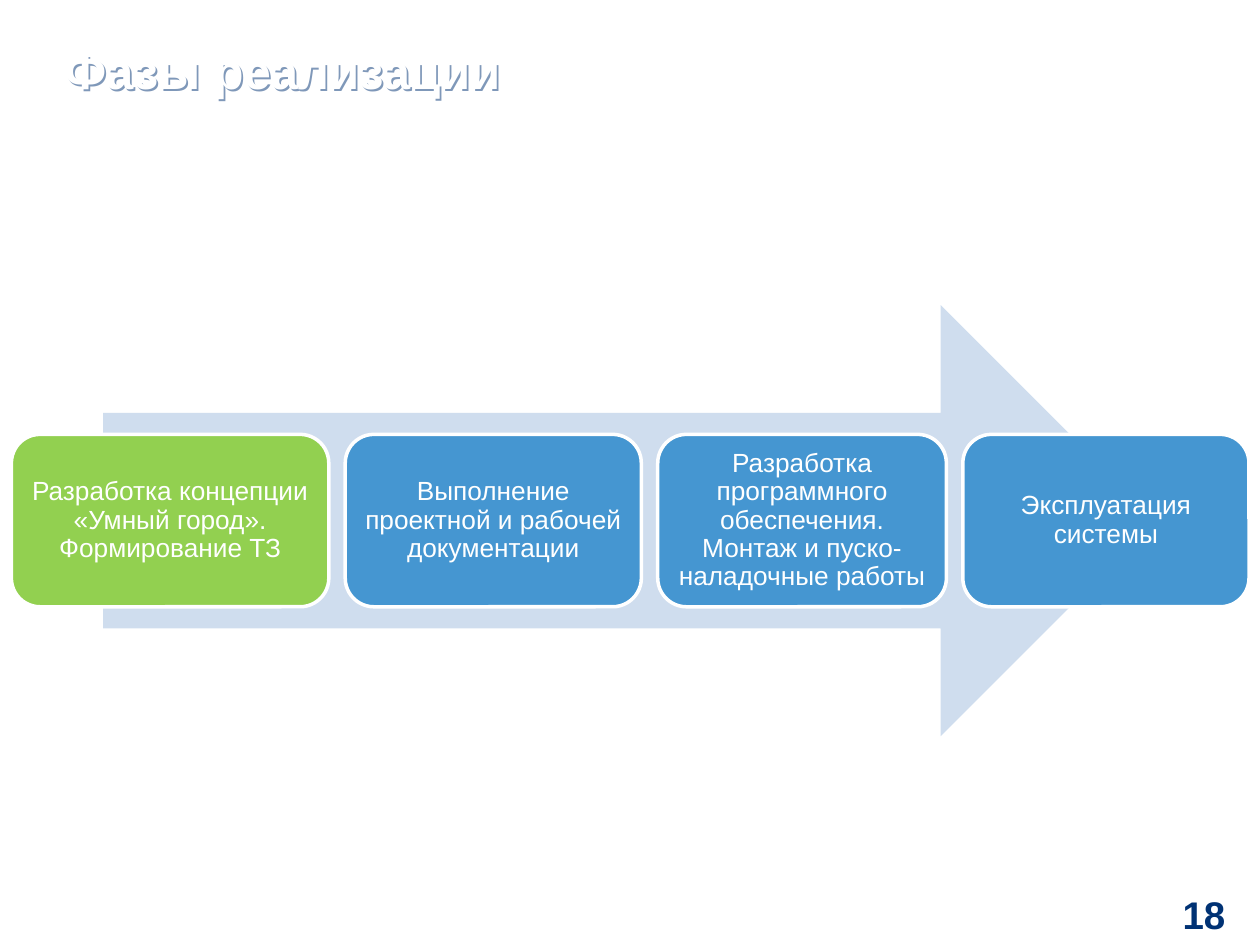
from dataclasses import dataclass

from lxml import etree
from pptx import Presentation
from pptx.dml.color import RGBColor
from pptx.enum.shapes import MSO_SHAPE
from pptx.enum.text import MSO_ANCHOR, PP_ALIGN
from pptx.oxml import parse_xml
from pptx.util import Cm, Pt


@dataclass(frozen=True)
class Theme:
    font: str = "Arial"
    white: str = "FFFFFF"
    navy: str = "003274"
    pale: str = "CFDDEE"
    green: str = "92D050"
    blue: str = "4596D1"
    title_size: int = 28
    number_size: int = 22
    card_size: int = 15


@dataclass(frozen=True)
class Box:
    """A region of the slide, in centimetres."""
    left: float
    top: float
    width: float
    height: float

    def lengths(self):
        return [Cm(side) for side in (self.left, self.top, self.width, self.height)]


THEME = Theme()
CARD_GAP = 0.33
PHASES = [
    ("Разработка концепции «Умный город». Формирование ТЗ", 6.4, THEME.green),
    ("Выполнение проектной и рабочей документации", 5.97, THEME.blue),
    ("Разработка программного обеспечения. Монтаж и пуско-наладочные работы",
     5.82, THEME.blue),
    ("Эксплуатация системы", 5.77, THEME.blue),
]


def set_all(target, values):
    for name, value in values.items():
        setattr(target, name, value)


def write(shape, text, size, color, align, bold=False, inset=0.0, spacing=1.0):
    frame = shape.text_frame
    margin = Cm(inset)
    set_all(frame, {"word_wrap": True, "vertical_anchor": MSO_ANCHOR.MIDDLE,
                    "margin_left": margin, "margin_right": margin,
                    "margin_top": margin, "margin_bottom": margin})
    para = frame.paragraphs[0]
    set_all(para, {"alignment": align, "line_spacing": spacing})
    span = para.add_run()
    span.text = text
    set_all(span.font, {"name": THEME.font, "size": Pt(size), "bold": bold})
    span.font.color.rgb = RGBColor.from_string(color)


def paint(shape, fill):
    shape.shadow.inherit = False
    shape.fill.solid()
    shape.fill.fore_color.rgb = RGBColor.from_string(fill)
    shape.line.fill.background()


def cast_text_shadow(shape):
    """Give an unfilled shape a shadow, which falls from its letters."""
    shape.shadow.inherit = False
    effects = shape.element.spPr.find(
        "{http://schemas.openxmlformats.org/drawingml/2006/main}effectLst")
    shadow = parse_xml(
        '<a:outerShdw xmlns:a="http://schemas.openxmlformats.org/drawingml/2006/main"'
        ' dist="17961" dir="2700000" algn="ctr" rotWithShape="0">'
        f'<a:srgbClr val="{THEME.navy}"><a:alpha val="50000"/></a:srgbClr>'
        '</a:outerShdw>')
    effects.append(shadow)


def place_title(page, box, text):
    title = page.shapes.title
    set_all(title, dict(zip(("left", "top", "width", "height"), box.lengths())))
    write(title, text, THEME.title_size, THEME.white, PP_ALIGN.LEFT,
          bold=True, spacing=0.9)
    cast_text_shadow(title)


def place_page_number(page, box, text):
    number = page.shapes.add_textbox(*box.lengths())
    write(number, text, THEME.number_size, THEME.navy, PP_ALIGN.RIGHT, bold=True)
    number.text_frame.margin_right = Cm(0.7)


def place_card(group, box, text, fill):
    card = group.shapes.add_shape(MSO_SHAPE.ROUNDED_RECTANGLE, *box.lengths())
    paint(card, fill)
    card.line.color.rgb = RGBColor.from_string(THEME.white)
    card.line.width = Pt(2)
    write(card, text, THEME.card_size, THEME.white, PP_ALIGN.CENTER,
          inset=0.15, spacing=0.9)


def place_process(page, box, phases):
    """Lay a row of cards along the middle of a wide arrow."""
    group = page.shapes.add_group_shape()
    arrow_box = Box(box.left + 1.85, box.top, 21.23, box.height)
    arrow = group.shapes.add_shape(MSO_SHAPE.RIGHT_ARROW, *arrow_box.lengths())
    paint(arrow, THEME.pale)
    card_height = box.height * 0.4
    card_top = box.top + (box.height - card_height) / 2
    left = box.left
    for text, width, fill in phases:
        place_card(group, Box(left, card_top, width, card_height), text, fill)
        left += width + CARD_GAP


def main():
    deck = Presentation()
    set_all(deck, {"slide_width": Cm(25.4), "slide_height": Cm(19.05)})
    page = deck.slides.add_slide(deck.slide_layouts[5])
    place_title(page, Box(1.3, 0.23, 22.81, 2.51), "Фазы реализации")
    place_page_number(page, Box(23.14, 17.91, 2.26, 1.04), "18")
    place_process(page, Box(0.23, 6.15, 24.95, 8.69), PHASES)
    deck.save("out.pptx")


if __name__ == "__main__":
    main()
